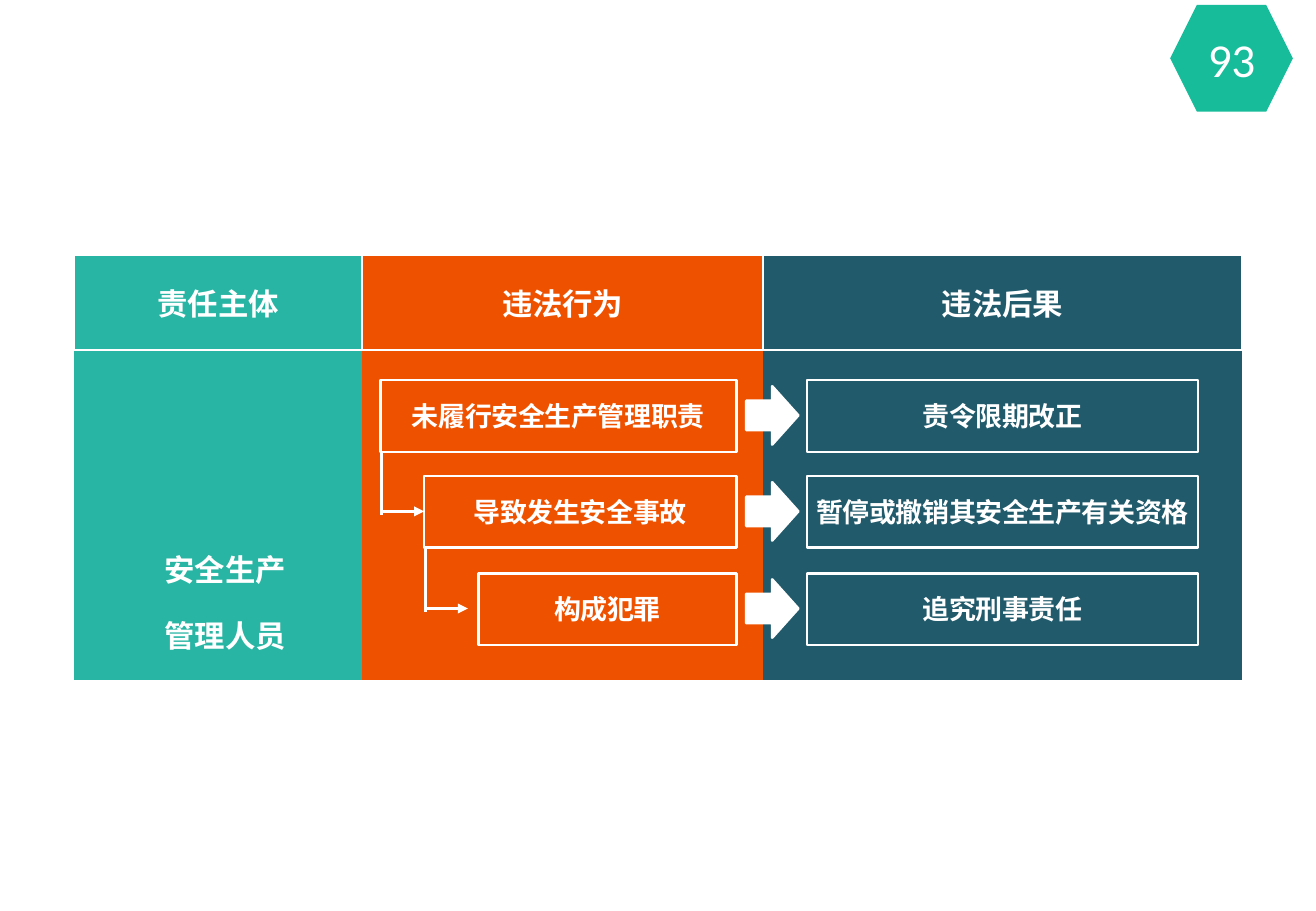
from lxml import etree
from pptx import Presentation
from pptx.dml.color import RGBColor
from pptx.enum.shapes import MSO_CONNECTOR, MSO_SHAPE
from pptx.enum.text import MSO_ANCHOR, PP_ALIGN
from pptx.oxml.ns import qn
from pptx.util import Inches, Pt

RECT, ARROW, HEX = MSO_SHAPE.RECTANGLE, MSO_SHAPE.RIGHT_ARROW, MSO_SHAPE.HEXAGON
LINE = MSO_CONNECTOR.STRAIGHT
MID, LOW, CENTER = MSO_ANCHOR.MIDDLE, MSO_ANCHOR.BOTTOM, PP_ALIGN.CENTER

# Content
WHITE, TEAL, ORANGE, NAVY, GREEN = "FFFFFF", "28B5A4", "EE5200", "205A6B", "17BC9B"
CJK = "Noto Sans CJK SC"
COLUMNS = [("责任主体", 2.37, TEAL), ("违法行为", 3.3, ORANGE), ("违法后果", 3.94, NAVY)]
SUBJECT = ["安全生产", "管理人员"]
# act, left of its box, top of its row, result
STEPS = [
    ("未履行安全生产管理职责", 3.13, 3.13, "责令限期改正"),
    ("导致发生安全事故", 3.49, 3.92, "暂停或撤销其安全生产有关资格"),
    ("构成犯罪", 3.94, 4.72, "追究刑事责任"),
]
PAGE = "93"

# Layout
LEFT, TOP, HEAD, BODY = 0.61, 2.1, 0.78, 2.72
ACT_END, RESULT, RESULT_W, BOX_H = 6.06, 6.64, 3.22, 0.59
STROKE = 1.56
PLAIN = "{2D5ABB26-0587-4C30-8999-92F81FD0307C}"

deck = Presentation()
deck.slide_width, deck.slide_height = Inches(10.83), Inches(7.5)
slide = deck.slides.add_slide(deck.slide_layouts[6])


def paint(fill, color):
    fill.solid()
    fill.fore_color.rgb = RGBColor.from_string(color)


def write(frame, lines, size, font=CJK, bold=True, space=0, pitch=None):
    for i, line in enumerate(lines):
        para = frame.paragraphs[0] if i == 0 else frame.add_paragraph()
        para.alignment = CENTER
        if pitch:
            para.line_spacing = pitch
        run = para.add_run()
        run.text = line
        run.font.size, run.font.bold, run.font.name = Pt(size), bold, font
        paint(run.font.fill, WHITE)
        props = run.font._element
        props.set("spc", str(space))
        etree.SubElement(props, qn("a:ea")).set("typeface", font)


def block(kind, x, y, w, h, color, edge=True, text=None, **style):
    shape = slide.shapes.add_shape(kind, Inches(x), Inches(y), Inches(w), Inches(h))
    shape.shadow.inherit = False
    paint(shape.fill, color)
    if edge:
        paint(shape.line.fill, WHITE)
        shape.line.width = Pt(STROKE)
    else:
        shape.line.fill.background()
    if text:
        frame = shape.text_frame
        frame.margin_left = frame.margin_right = 0
        frame.margin_top = frame.margin_bottom = 0
        frame.word_wrap, frame.vertical_anchor = False, MID
        write(frame, [text], **style)


def link(x1, y1, x2, y2, tip=False):
    line = slide.shapes.add_connector(LINE, Inches(x1), Inches(y1), Inches(x2), Inches(y2))
    paint(line.line.fill, WHITE)
    line.line.width = Pt(STROKE)
    if tip:
        etree.SubElement(line.line._get_or_add_ln(), qn("a:tailEnd")).set("type", "triangle")
    etree.SubElement(line._element.spPr, qn("a:effectLst"))


def border(cell, sides):
    props = cell._tc.get_or_add_tcPr()
    for side in sides:
        line = etree.SubElement(props, qn("a:ln" + side), w=str(Pt(1)))
        fill = etree.SubElement(line, qn("a:solidFill"))
        etree.SubElement(fill, qn("a:srgbClr")).set("val", WHITE)


# Table
width = sum(w for _, w, _ in COLUMNS)
holder = slide.shapes.add_table(
    2, len(COLUMNS), Inches(LEFT), Inches(TOP), Inches(width), Inches(HEAD + BODY))
table = holder.table
table._tbl.tblPr.find(qn("a:tableStyleId")).text = PLAIN
table.rows[0].height, table.rows[1].height = Inches(HEAD), Inches(BODY)
for i, (title, w, color) in enumerate(COLUMNS):
    table.columns[i].width = Inches(w)
    head, body = table.cell(0, i), table.cell(1, i)
    border(head, "LRTB")
    border(body, "T")
    paint(head.fill, color)
    paint(body.fill, color)
    head.vertical_anchor = MID
    write(head.text_frame, [title], 18, space=-10)

who = table.cell(1, 0)
who.vertical_anchor = LOW
who.margin_left, who.margin_right, who.margin_bottom = Inches(0.12), 0, Inches(0.2)
write(who.text_frame, SUBJECT, 18, pitch=1.5)

# Acts, arrows and results
for act, x, y, result in STEPS:
    block(RECT, x, y, ACT_END - x, BOX_H, ORANGE, text=act, size=16, space=-20)
    block(RECT, RESULT, y, RESULT_W, BOX_H, NAVY, text=result, size=16, space=-20)
    block(ARROW, 6.14, y + 0.05, 0.43, 0.48, WHITE)

# Links from each act to the next
for (_, x, y, _), (_, _, below, _) in zip(STEPS, STEPS[1:]):
    mid = below + 0.29
    link(x + 0.01, y + BOX_H, x + 0.01, mid + 0.03)
    link(x, mid, x + 0.36, mid, tip=True)

# Page number
block(HEX, 9.63, 0.04, 1.01, 0.88, GREEN, edge=False, text=PAGE,
      size=28, font="Calibri", bold=False, space=-20)

deck.save("out.pptx")
